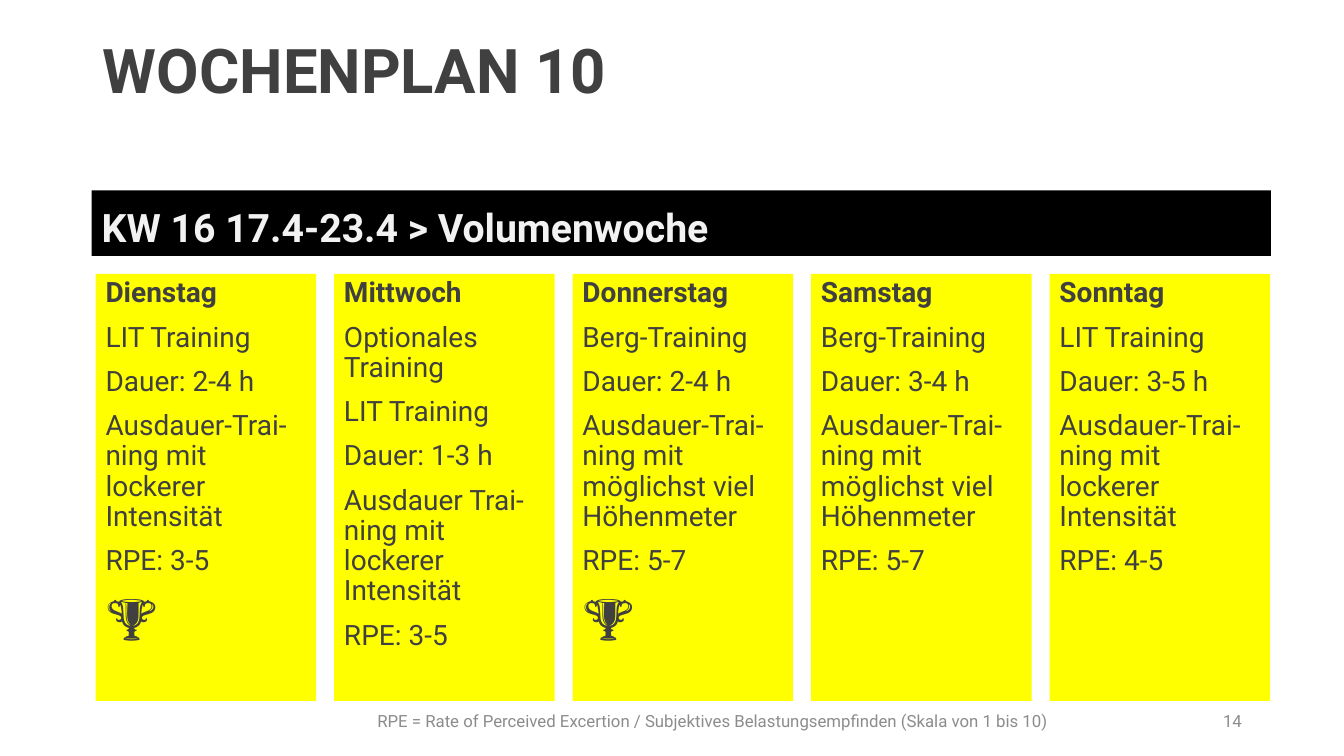
from pptx import Presentation
from pptx.dml.color import RGBColor
from pptx.enum.text import MSO_ANCHOR as Anchor, MSO_AUTO_SIZE as Fit, PP_ALIGN as Align
from pptx.util import Cm, Pt
from lxml.etree import SubElement
from pptx.oxml.ns import qn

TITLE = "WOCHENPLAN 10"
WEEK = "KW 16 17.4-23.4 > Volumenwoche"
NOTE = "RPE = Rate of Perceived Excertion / Subjektives Belastungsempfinden (Skala von 1 bis 10)"
PAGE = "14"
CUP = "🏆"
EASY = "Ausdauer-Trai-ning mit lockerer Intensität"
CLIMB = "Ausdauer-Trai-ning mit möglichst viel Höhenmeter"
DAYS = [
    ("Dienstag", "LIT Training", "Dauer: 2-4 h", EASY, "RPE: 3-5", CUP),
    ("Mittwoch", "Optionales Training", "LIT Training", "Dauer: 1-3 h",
     "Ausdauer Trai-ning mit lockerer Intensität", "RPE: 3-5"),
    ("Donnerstag", "Berg-Training", "Dauer: 2-4 h", CLIMB, "RPE: 5-7", CUP),
    ("Samstag", "Berg-Training", "Dauer: 3-4 h", CLIMB, "RPE: 5-7"),
    ("Sonntag", "LIT Training", "Dauer: 3-5 h", EASY, "RPE: 4-5"),
]

DARK, GREY, PALE, BLACK, YELLOW = "404040", "8C8C8C", "F2F2F2", "000000", "FFFF00"
LEFT, TOP, WIDE, HIGH, STEP = 2.41, 6.9, 5.56, 10.76, 6.01


def color(code):
    return RGBColor.from_string(code)


def place(box, left, top, wide, high, fill=None, anchor=Anchor.TOP):
    box.left, box.top, box.width, box.height = map(Cm, (left, top, wide, high))
    if fill:
        box.fill.solid()
        box.fill.fore_color.rgb = color(fill)
    frame = box.text_frame
    for name, value in dict(word_wrap=True, auto_size=Fit.NONE,
                            vertical_anchor=anchor).items():
        setattr(frame, name, value)
    return frame


def write(para, text, size, code, bold=False, align=Align.LEFT, line=0.9, before=0):
    props = para._p.get_or_add_pPr()
    props.set("marL", "0")
    props.set("indent", "0")
    SubElement(props, qn("a:buNone"))
    para.alignment, para.line_spacing, para.space_before = align, line, Pt(before)
    run = para.add_run()
    run.text = text
    for name, value in dict(name="Roboto", size=Pt(size), bold=bold).items():
        setattr(run.font, name, value)
    run.font.color.rgb = color(code)


def main():
    deck = Presentation()
    deck.slide_width, deck.slide_height = Cm(33.87), Cm(19.05)
    slide = deck.slides.add_slide(deck.slide_layouts[1])
    head, bar = slide.placeholders

    def box():
        return slide.shapes.add_textbox(0, 0, 0, 0)

    frame = place(head, 2.34, 0.23, 25.45, 3.23, anchor=Anchor.MIDDLE)
    write(frame.paragraphs[0], TITLE, 44, DARK, bold=True)
    frame = place(bar, 2.31, 4.8, 29.72, 1.65, BLACK, Anchor.BOTTOM)
    write(frame.paragraphs[0], WEEK, 28, PALE, bold=True)

    for text, left, wide, align in ((NOTE, 4.39, 27.15, Align.CENTER),
                                    (PAGE, 23.93, 7.62, Align.RIGHT)):
        frame = place(box(), left, 17.65, wide, 1.03, anchor=Anchor.MIDDLE)
        write(frame.paragraphs[0], text, 12, GREY, align=align, line=1)

    for col, day in enumerate(DAYS):
        frame = place(box(), LEFT + col * STEP, TOP, WIDE, HIGH, YELLOW)
        for row, text in enumerate(day):
            para = frame.add_paragraph() if row else frame.paragraphs[0]
            write(para, text, 40 if text == CUP else 20, DARK,
                  bold=row == 0, before=10 if row else 0)

    deck.save("out.pptx")


if __name__ == "__main__":
    main()
